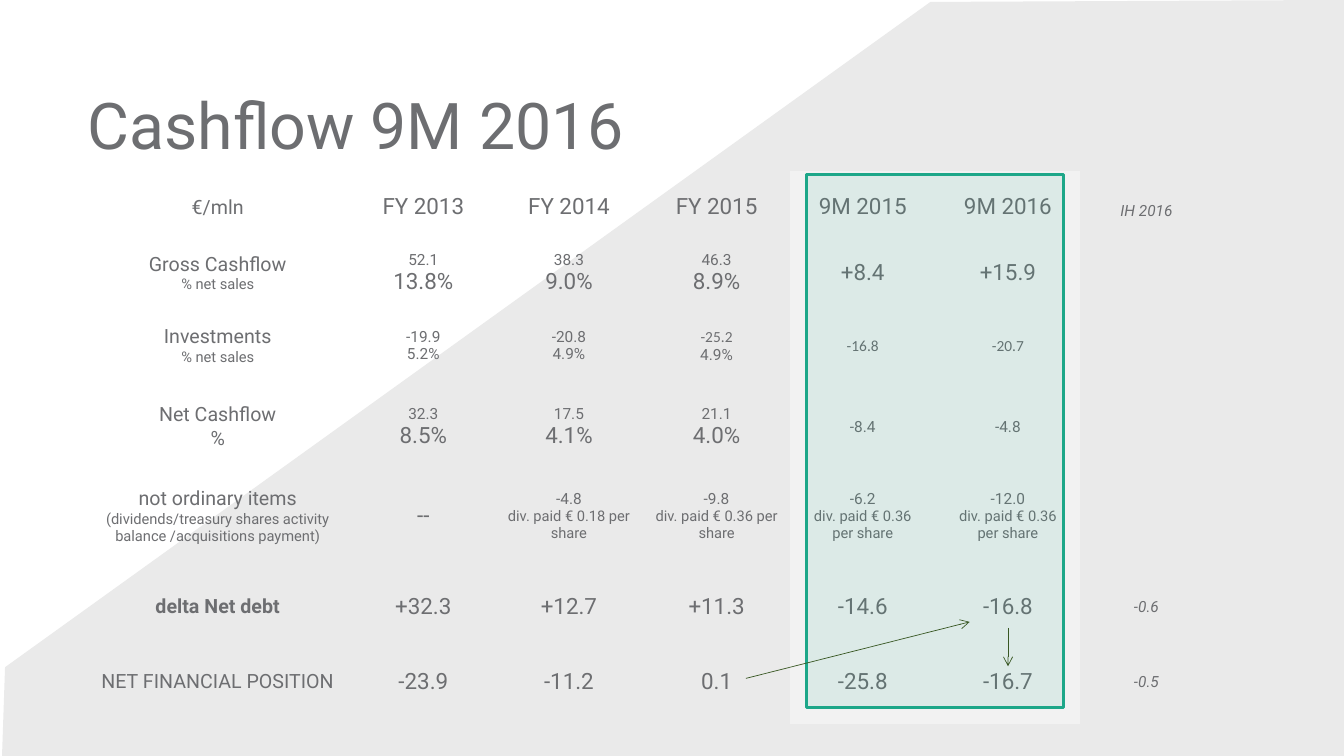
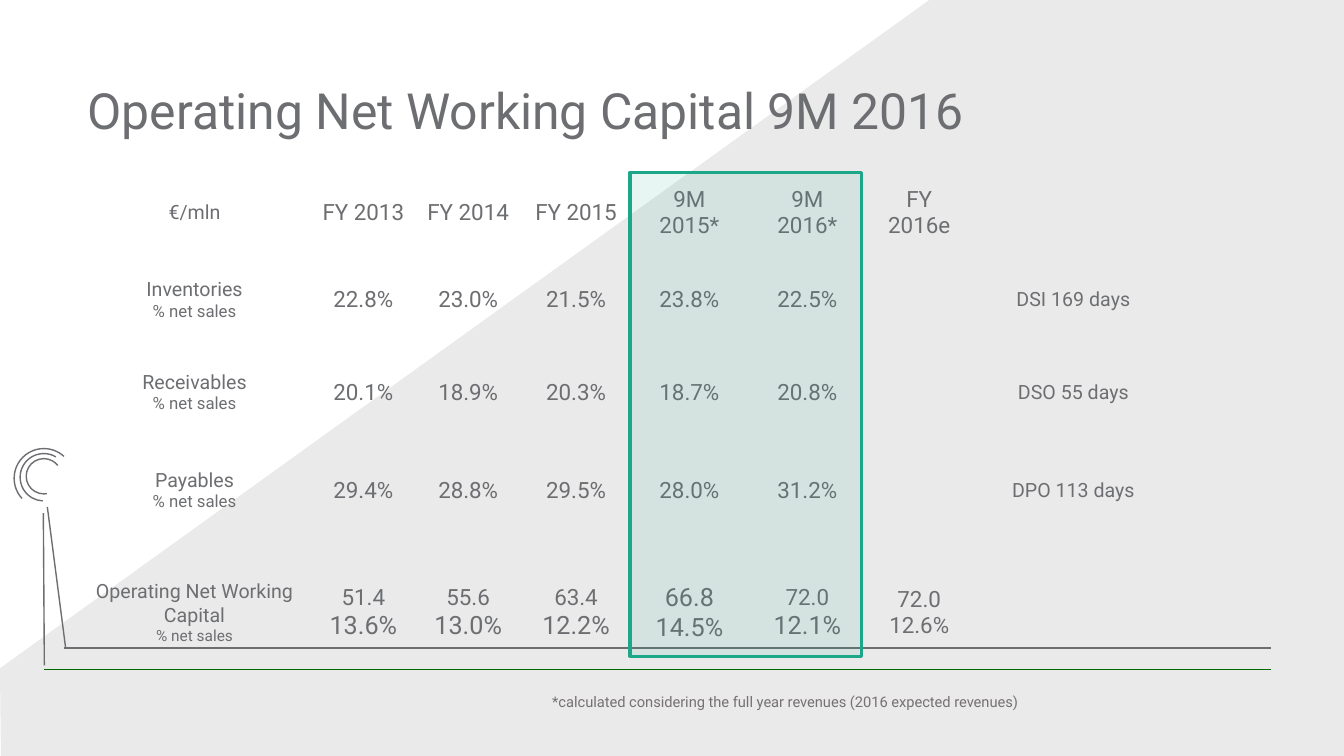
"""Build two cash and capital slides on a grid of tenth-inch cells."""
from lxml import etree
from pptx import Presentation, util as u
from pptx.dml.color import RGBColor
from pptx.enum import shapes, text
from pptx.oxml.ns import qn

WIDE, HIGH = 133.33, 75
GREY, BAND, PALE, TEAL = "6D6E71", "EAEAEA", "F2F2F2", "1DA789"
NOTE, MOSS, PINE = "767171", "385723", "006600"
FACE = "Roboto"
PLAIN = "{2D5ABB26-0587-4C30-8999-92F81FD0307C}"
MID, LOW = text.MSO_ANCHOR.MIDDLE, text.MSO_ANCHOR.BOTTOM


def cell(num):
    """Turn grid cells into a length."""
    return u.Inches(num / 10)


def paint(form, tone):
    """Give a fill or line format a solid colour."""
    if hasattr(form, "solid"):
        form.solid()
        form.fore_color.rgb = RGBColor.from_string(tone)
    else:
        form.color.rgb = RGBColor.from_string(tone)


def add_run(para, word, size, style="", face=FACE, tone=GREY):
    """Add one run to a paragraph."""
    run = para.add_run()
    run.text = word
    run.font.size, run.font.name = u.Pt(size), face
    run.font.bold, run.font.italic = "b" in style, "i" in style
    paint(run.font, tone)


def write(frame, paras, align=None):
    """Fill a text frame with paragraphs, each a list of runs."""
    for num, runs in enumerate(paras):
        para = frame.add_paragraph() if num else frame.paragraphs[0]
        para.alignment = align
        for run in runs:
            add_run(para, *run)


def one(size, *words, style="", face=FACE):
    """Make cells that hold one line each."""
    return [[[(word, size, style, face)]] for word in words]


def two(top, low, *pairs):
    """Make cells that hold two lines each."""
    return [[[(a, top)], [(b, low)]] for a, b in pairs]


def box(slide, x, y, wide, high):
    """Add a wrapping text box."""
    frame = slide.shapes.add_textbox(*map(cell, (x, y, wide, high))).text_frame
    frame.word_wrap = True
    return frame


def title(slide, y, words, size, gap):
    """Add the slide title."""
    frame = box(slide, 8.7, y, 93.4, 8.1)
    frame.margin_left = frame.margin_right = 0
    frame.margin_top = frame.margin_bottom = 0
    write(frame, [[(words, size)]])
    frame.paragraphs[0].line_spacing = gap


def band(slide, *edge):
    """Draw the slanted grey band from its left edge to the right side."""
    dots = [(cell(x), cell(y)) for x, y in (*edge, (WIDE, 0), (WIDE, HIGH))]
    form = slide.shapes.build_freeform(*dots[0])
    form.add_line_segments(dots[1:], close=True)
    shape = form.convert_to_shape()
    shape.shadow.inherit = False
    paint(shape.fill, BAND)
    shape.line.fill.background()


def focus(slide, *area):
    """Frame the key columns with a clear teal box."""
    kind = shapes.MSO_SHAPE.RECTANGLE
    shape = slide.shapes.add_shape(kind, *map(cell, area))
    shape.shadow.inherit = False
    paint(shape.fill, TEAL)
    tint = next(shape.element.spPr.iter(qn("a:srgbClr")))
    etree.SubElement(tint, qn("a:alpha")).set("val", "10000")
    paint(shape.line, TEAL)
    shape.line.width = u.Pt(2.25)


def line(slide, ends, tone=GREY, width=1, arrow=False):
    """Draw a straight line, with an arrowhead if asked."""
    kind = shapes.MSO_CONNECTOR.STRAIGHT
    link = slide.shapes.add_connector(kind, *map(cell, ends))
    paint(link.line, tone)
    link.line.width = u.Pt(width)
    if arrow:
        tail = etree.SubElement(link.line._get_or_add_ln(), qn("a:tailEnd"))
        tail.set("type", "arrow")
    etree.SubElement(link.element.spPr, qn("a:effectLst"))


def arc(slide, x, y, size, start, end):
    """Draw an open arc."""
    area = map(cell, (x, y, size, size))
    shape = slide.shapes.add_shape(shapes.MSO_SHAPE.ARC, *area)
    shape.shadow.inherit = False
    shape.adjustments[0], shape.adjustments[1] = start, end
    shape.fill.background()
    paint(shape.line, GREY)
    shape.line.width = u.Pt(1)


def table(slide, x, y, cols, rows, pad, shade=()):
    """Add a table; a row is height, anchor, top inset, low inset, cells."""
    area = (x, y, sum(cols), sum(row[0] for row in rows))
    frame = slide.shapes.add_table(len(rows), len(cols), *map(cell, area))
    next(frame.element.iter(qn("a:tableStyleId"))).text = PLAIN
    grid = frame.table
    grid.first_row = grid.horz_banding = False
    for col, wide in zip(grid.columns, cols):
        col.width = cell(wide)
    for r, (high, hold, top, low, items) in enumerate(rows):
        grid.rows[r].height = cell(high)
        for c in range(len(cols)):
            spot = grid.cell(r, c)
            spot.margin_left = spot.margin_right = cell(pad)
            spot.margin_top, spot.margin_bottom = cell(top), cell(low)
            spot.vertical_anchor = hold
            if c in shade:
                paint(spot.fill, PALE)
            else:
                spot.fill.background()
            if c < len(items):
                write(spot.text_frame, items[c], text.PP_ALIGN.CENTER)


def cash(slide):
    """Build the cashflow slide."""
    band(slide, (0.2, HIGH), (0.5, 66.2), (92.3, 0.2))
    title(slide, 9.3, "Cashflow 9M 2016", 46, 0.9)
    odd = [[[("not ordinary items ", 14),
             ("(dividends/treasury shares activity balance "
              "/acquisitions payment)", 10.5)]]]
    low, high = "div. paid € 0.18 per share", "div. paid € 0.36 per share"
    rows = [
        (5.9, LOW, 0, 1.1, one(14, "€/mln")
         + one(16, "FY 2013", "FY 2014", "FY 2015", "9M 2015", "9M 2016")
         + one(11, "IH 2016", style="i")),
        (8.4, MID, 0, 0, two(14, 10.5, ("Gross Cashflow", "% net sales"))
         + two(11, 16, ("52.1", "13.8%"), ("38.3", "9.0%"), ("46.3", "8.9%"))
         + one(16, "+8.4", "+15.9")),
        (7, MID, 0, 1, two(14, 10.5, ("Investments", "% net sales"))
         + two(11, 11, ("-19.9", "5.2%"), ("-20.8", "4.9%"))
         + [[[("-25.2", 11, "", "Calibri")], [("4.9%", 11)]]]
         + one(11, "-16.8", "-20.7", face="Calibri")),
        (8.1, MID, 0, 0, two(14, 14, ("Net Cashflow", "%"))
         + two(11, 16, ("32.3", "8.5%"), ("17.5", "4.1%"), ("21.1", "4.0%"))
         + one(11, "-8.4", "-4.8")),
        (9.6, MID, 0, 0, odd + one(16, "--")
         + two(11, 10.5, ("-4.8", low), ("-9.8", high), ("-6.2", high),
               ("-12.0", high))),
        (7.5, MID, 1, 0, one(14, "delta Net debt", style="b")
         + one(16, "+32.3", "+12.7", "+11.3", "-14.6", "-16.8")
         + one(11, "-0.6", style="i")),
        (8.3, MID, 0, 0, one(14, "NET FINANCIAL POSITION")
         + one(16, "-23.9", "-11.2", "0.1", "-25.8", "-16.7")
         + one(11, "-0.5", style="i")),
    ]
    cols = (26.6, 14.2, 14.7, 14.6, 14.4, 14.4, 13.1)
    table(slide, 8.3, 17, cols, rows, 1.2, (4, 5))
    focus(slide, 80, 17.3, 25.5, 52.9)
    for ends in ((74, 67.3, 96.2, 61.7), (100, 62.3, 100, 66.1)):
        line(slide, ends, MOSS, 0.5, True)


def funds(slide):
    """Build the working capital slide."""
    band(slide, (0.1, HIGH), (0, 66.3), (92.2, 0))
    line(slide, (6.4, 64.3, 126.1, 64.3))
    line(slide, (4.4, 66.4, 126.1, 66.4), PINE)
    for ends in ((4.4, 66, 4.3, 50.9), (6.5, 64.2, 4.7, 50.3)):
        line(slide, ends)
    turns = ((82.41, 187.53), (55.61, 180.4), (48.18, 193.37))
    for num, (start, end) in enumerate(turns):
        step = 0.6 * num
        arc(slide, 1.4 + step, 44.5 + 0.5 * num, 5.9 - 2 * step, start, end)
    title(slide, 9.5, "Operating Net Working Capital 9M 2016", 35.6, 0.7)
    share = "% net sales"
    rows = [(7.2, MID, 0, 0, one(14, "€/mln")
             + one(16, "FY 2013", "FY 2014", "FY 2015", "9M 2015*",
                   "9M 2016*", "FY 2016e"))]
    for high, name, rates, days in (
            (10.1, "Inventories", "22.8% 23.0% 21.5% 23.8% 22.5%",
             "DSI 169 days"),
            (8.3, "Receivables", "20.1% 18.9% 20.3% 18.7% 20.8%",
             "DSO 55 days"),
            (11.1, "Payables", "29.4% 28.8% 29.5% 28.0% 31.2%",
             "DPO 113 days")):
        items = two(14, 12, (name, share)) + one(16, *rates.split())
        rows.append((high, MID, 0, 0, items + [[]] + one(14, days)))
    rows.append((13.2, MID, 0, 0,
                 two(14, 11, ("Operating Net Working Capital", share))
                 + two(16, 18, ("51.4", "13.6%"), ("55.6", "13.0%"),
                       ("63.4", "12.2%"))
                 + two(18, 18, ("66.8", "14.5%"))
                 + two(16, 18, ("72.0", "12.1%"))
                 + two(16, 16, ("72.0", "12.6%"))))
    cols = (23.2, 10.3, 10.5, 10.9, 11.6, 11.8, 10.4, 20.2)
    table(slide, 7.7, 17.5, cols, rows, 1.1)
    words = ("*calculated considering the full year revenues "
             "(2016 expected revenues)")
    write(box(slide, 53.8, 68.2, 49.9, 4.5),
          [[(words, 10.5, "", FACE, NOTE)]])
    focus(slide, 62.5, 17.1, 23, 48)


def main():
    """Build and save the deck."""
    deck = Presentation()
    deck.slide_width, deck.slide_height = cell(WIDE), cell(HIGH)
    for build in (cash, funds):
        build(deck.slides.add_slide(deck.slide_layouts[6]))
    deck.save("out.pptx")


if __name__ == "__main__":
    main()
